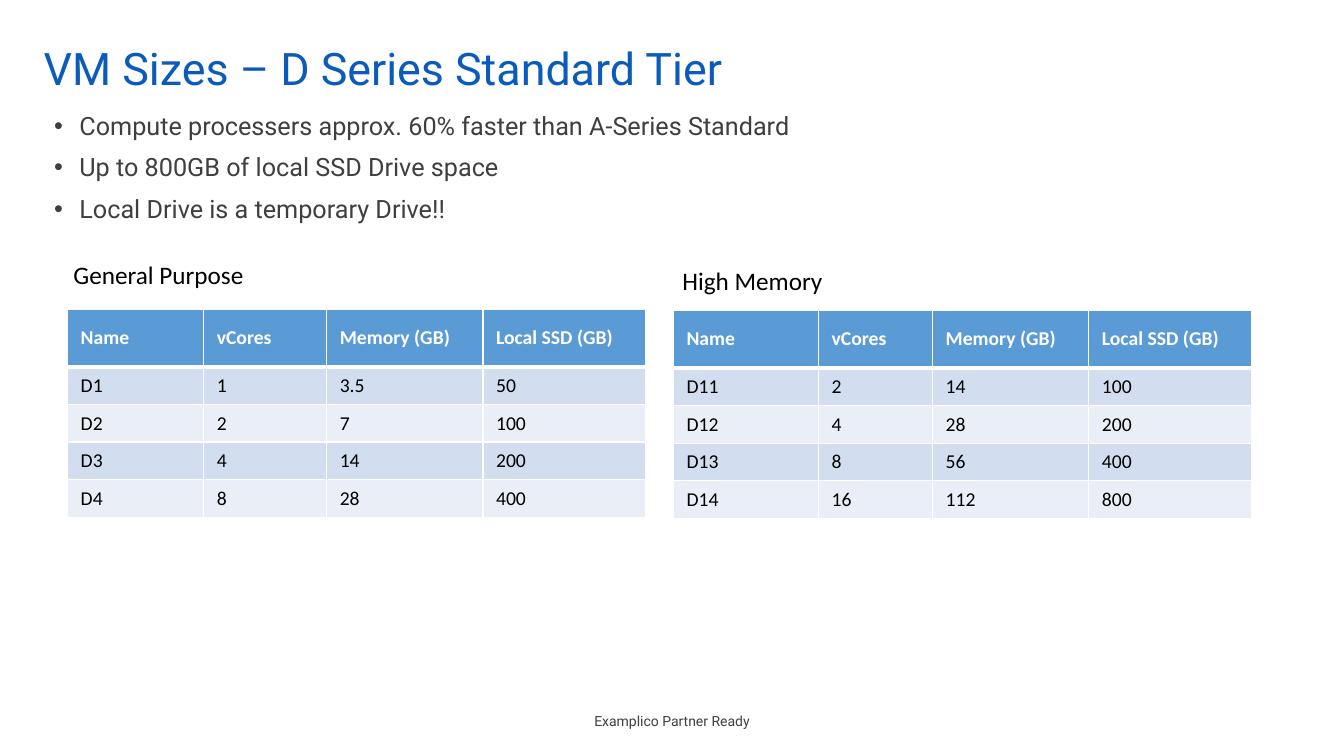
from lxml.etree import SubElement
from pptx import Presentation
from pptx.dml.color import RGBColor
from pptx.enum.text import MSO_ANCHOR as Anchor, PP_ALIGN as Align
from pptx.oxml.ns import qn
from pptx.util import Inches, Pt

WIDTH, HEIGHT = Inches(13.33), Inches(7.5)
BLUE, GRAY, BLACK, WHITE = "0A5BBA", "3F3F3F", "000000", "FFFFFF"
HEADER_FILL, BAND_FILLS = "5B9BD5", ("D2DEEF", "EAEFF7")
HEADINGS = ("Name", "vCores", "Memory (GB)", "Local SSD (GB)")
HEADER_HEIGHT, ROW_HEIGHT = 7.6, 4.93
BULLETS = (
    "Compute processers approx. 60% faster than A-Series Standard",
    "Up to 800GB of local SSD Drive space",
    "Local Drive is a temporary Drive!!",
)
GENERAL_PURPOSE = (
    ("D1", "1", "3.5", "50"),
    ("D2", "2", "7", "100"),
    ("D3", "4", "14", "200"),
    ("D4", "8", "28", "400"),
)
HIGH_MEMORY = (
    ("D11", "2", "14", "100"),
    ("D12", "4", "28", "200"),
    ("D13", "8", "56", "400"),
    ("D14", "16", "112", "800"),
)


def color(value):
    return RGBColor.from_string(value)


def across(percent):
    return round(WIDTH * percent / 100)


def down(percent):
    return round(HEIGHT * percent / 100)


def area(left, top, width, height):
    return across(left), down(top), across(width), down(height)


def write(para, text, size=18, font="Calibri", ink=BLACK, bold=False,
          align=Align.LEFT, spacing=None, before=None):
    para.alignment = align
    para.line_spacing = spacing
    para.space_before = before
    span = para.add_run()
    span.text = text
    span.font.size = Pt(size)
    span.font.name = font
    span.font.bold = bold
    span.font.color.rgb = color(ink)


def add_title(page, text, place):
    title = page.shapes.title
    title.left, title.top, title.width, title.height = place
    title.text_frame.vertical_anchor = Anchor.MIDDLE
    write(title.text_frame.paragraphs[0], text, size=32, font="Roboto",
          ink=BLUE, spacing=0.9)


def add_label(page, text, place, wrap=False, anchor=Anchor.TOP, **style):
    frame = page.shapes.add_textbox(*place).text_frame
    frame.word_wrap = wrap
    frame.vertical_anchor = anchor
    write(frame.paragraphs[0], text, **style)
    return frame


def add_bullets(page, lines, place):
    frame = page.shapes.add_textbox(*place).text_frame
    frame.word_wrap = True
    for index, line in enumerate(lines):
        para = frame.add_paragraph() if index else frame.paragraphs[0]
        write(para, line, font="Roboto", ink=GRAY, spacing=0.9, before=Pt(10))
        properties = para._p.get_or_add_pPr()
        properties.set("marL", str(Inches(0.25)))
        properties.set("indent", str(-Inches(0.25)))
        SubElement(properties, qn("a:buFont")).set("typeface", "Arial")
        SubElement(properties, qn("a:buChar")).set("char", "•")


def add_borders(cell, **widths):
    properties = cell._tc.get_or_add_tcPr()
    for position, (side, width) in enumerate(widths.items()):
        line = SubElement(properties, qn(f"a:ln{side}"))
        line.set("w", str(Pt(width)))
        fill = SubElement(line, qn("a:solidFill"))
        SubElement(fill, qn("a:srgbClr")).set("val", WHITE)
        properties.insert(position, line)


def fill_cell(cell, text, fill, ink, header, below_header):
    cell.fill.solid()
    cell.fill.fore_color.rgb = color(fill)
    cell.vertical_anchor = Anchor.MIDDLE
    cell.margin_left = cell.margin_right = Inches(0.13)
    cell.margin_top = cell.margin_bottom = Inches(0.07)
    write(cell.text_frame.paragraphs[0], text, size=14, ink=ink, bold=header)
    add_borders(cell, L=1, R=1, T=3 if below_header else 1, B=3 if header else 1)


def add_size_table(page, left, top, columns, sizes):
    rows = (HEADINGS, *sizes)
    heights = [HEADER_HEIGHT] + [ROW_HEIGHT] * len(sizes)
    place = area(left, top, sum(columns), sum(heights))
    table = page.shapes.add_table(len(rows), len(columns), *place).table
    for column, width in zip(table.columns, columns):
        column.width = across(width)
    for index, (values, height) in enumerate(zip(rows, heights)):
        table.rows[index].height = down(height)
        header = index == 0
        fill = HEADER_FILL if header else BAND_FILLS[(index - 1) % 2]
        for cell, value in zip(table.rows[index].cells, values):
            fill_cell(cell, value, fill, WHITE if header else BLACK,
                      header, index == 1)


def main():
    deck = Presentation()
    deck.slide_width, deck.slide_height = WIDTH, HEIGHT
    page = deck.slides.add_slide(deck.slide_layouts[5])
    page.background.fill.solid()
    page.background.fill.fore_color.rgb = color(WHITE)

    footer = add_label(page, "Examplico Partner Ready",
                       area(38.33, 92.67, 23.33, 5.33), wrap=True,
                       anchor=Anchor.MIDDLE, size=10, font="Roboto",
                       ink=GRAY, align=Align.CENTER)
    footer.margin_left = footer.margin_right = Inches(0.2)
    add_title(page, "VM Sizes – D Series Standard Tier", area(2.5, 4.4, 92.5, 10))
    add_bullets(page, BULLETS, area(3.3, 14.4, 91.67, 72.27))
    add_size_table(page, 5.03, 40.93, (10.13, 9.15, 11.63, 12.08), GENERAL_PURPOSE)
    add_size_table(page, 50.11, 41.07, (10.8, 8.48, 11.63, 12.08), HIGH_MEMORY)
    add_label(page, "General Purpose", area(4.73, 33.6, 14.33, 5.33))
    add_label(page, "High Memory", area(50.04, 34.4, 12.08, 5.33))
    deck.save("out.pptx")


if __name__ == "__main__":
    main()
